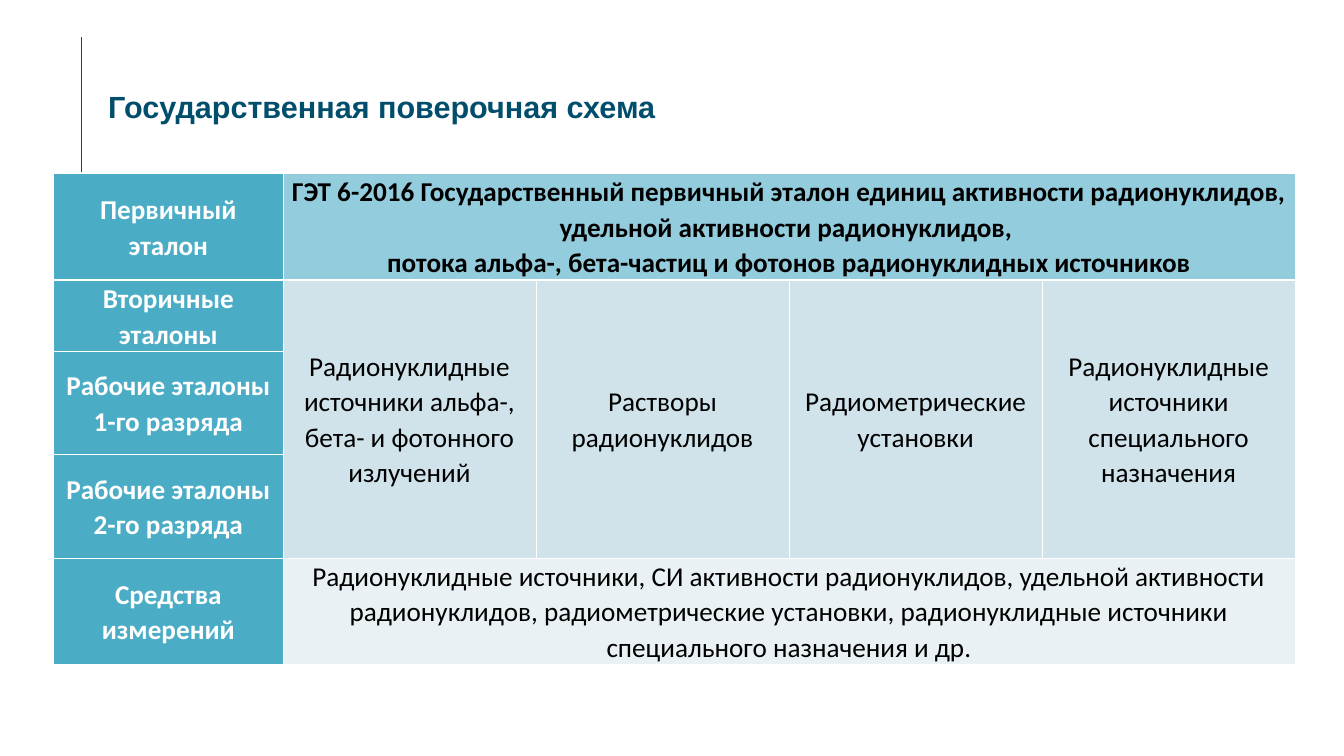
from lxml import etree
from pptx import Presentation
from pptx import util as u
from pptx.dml.color import RGBColor
from pptx.enum import shapes, text
from pptx.oxml import ns

TITLE = "Государственная поверочная схема"
LEVELS = [
    "Первичный эталон",
    "Вторичные эталоны",
    "Рабочие эталоны 1-го разряда",
    "Рабочие эталоны 2-го разряда",
    "Средства измерений",
]
PRIMARY_STANDARD = (
    "ГЭТ 6-2016 Государственный первичный эталон единиц активности радионуклидов, "
    "удельной активности радионуклидов, \n"
    "потока альфа-, бета-частиц и фотонов радионуклидных источников"
)
STANDARD_KINDS = [
    "Радионуклидные источники альфа-, бета- и фотонного излучений",
    "Растворы радионуклидов",
    "Радиометрические установки",
    "Радионуклидные источники специального назначения",
]
INSTRUMENTS = (
    "Радионуклидные источники, СИ активности радионуклидов, удельной активности "
    "радионуклидов, радиометрические установки, радионуклидные источники "
    "специального назначения и др."
)

SLIDE_POINTS = (1583, 890)
TITLE_BOX = (1.77, 1.41, 18.44, 0.66)
RULE = (1.33, 2.82, 1.33, 0.6)
TABLE_BOX = (0.88, 2.84, 20.31, 7.87)
COLUMN_WIDTHS = [3.75] + [4.14] * len(STANDARD_KINDS)
ROW_HEIGHTS = [1.69, 1.11, 1.69, 1.69, 1.69]
CELL_MARGIN = 0.1


class Theme:
    title_font, table_font = "Arial", "Calibri"
    title_size, table_size = 36, 32
    rule_width, border_width, header_border_width = 1.65, 1, 3
    navy, white, black = "004E6B", "FFFFFF", "000000"
    level, primary, kind, instruments = "4BACC6", "93CDDD", "D0E3EA", "E9F1F5"


def inches(values):
    return [u.Inches(value) for value in values]


def write(frame, content, *, font, size, color, bold=False, align=None,
          spacing=None):
    """Fill the first paragraph, with pair kerning off."""
    paragraph = frame.paragraphs[0]
    paragraph.text = content
    paragraph.alignment = align
    paragraph.line_spacing = spacing
    for run in paragraph.runs:
        run.font.name = font
        run.font.size = u.Pt(size)
        run.font.bold = bold
        run.font.color.rgb = RGBColor.from_string(color)
        run._r.get_or_add_rPr().set("kern", "0")


def set_borders(cell, widths):
    """Draw white borders; widths are points for left, right, top, bottom."""
    properties = cell._tc.get_or_add_tcPr()
    for index, (side, width) in enumerate(zip("LRTB", widths)):
        line = etree.Element(ns.qn(f"a:ln{side}"), w=str(int(u.Pt(width))))
        fill = etree.SubElement(line, ns.qn("a:solidFill"))
        etree.SubElement(fill, ns.qn("a:srgbClr"), val=Theme.white)
        properties.insert(index, line)


def fill_cell(cell, content, fill, *, color=Theme.black, bold=False,
              anchor=text.MSO_ANCHOR.MIDDLE):
    cell.fill.solid()
    cell.fill.fore_color.rgb = RGBColor.from_string(fill)
    cell.vertical_anchor = anchor
    cell.margin_left = cell.margin_right = u.Inches(CELL_MARGIN)
    cell.margin_top = cell.margin_bottom = 0
    write(cell.text_frame, content, font=Theme.table_font, size=Theme.table_size,
          color=color, bold=bold, align=text.PP_ALIGN.CENTER, spacing=1.07)


def add_rule(slide):
    rule = slide.shapes.add_connector(shapes.MSO_CONNECTOR.STRAIGHT, *inches(RULE))
    rule.line.color.rgb = RGBColor.from_string(Theme.navy)
    rule.line.width = u.Pt(Theme.rule_width)
    etree.SubElement(rule._element.spPr, ns.qn("a:effectLst"))


def add_title(slide):
    title = slide.shapes.title
    title.left, title.top, title.width, title.height = inches(TITLE_BOX)
    frame = title.text_frame
    frame.margin_left = frame.margin_right = frame.margin_top = frame.margin_bottom = 0
    frame.vertical_anchor = text.MSO_ANCHOR.MIDDLE
    frame.auto_size = text.MSO_AUTO_SIZE.NONE
    frame.word_wrap = True
    write(frame, TITLE, font=Theme.title_font, size=Theme.title_size,
          color=Theme.navy, bold=True, align=text.PP_ALIGN.LEFT)


def add_scheme(slide):
    table = slide.shapes.add_table(
        len(LEVELS), len(COLUMN_WIDTHS), *inches(TABLE_BOX)).table
    table.first_row = table.horz_banding = False
    for column, width in zip(table.columns, inches(COLUMN_WIDTHS)):
        column.width = width
    for row, height in zip(table.rows, inches(ROW_HEIGHTS)):
        row.height = height

    last_row, last_column = len(LEVELS) - 1, len(STANDARD_KINDS)
    for row, level in enumerate(LEVELS):
        fill_cell(table.cell(row, 0), level, Theme.level,
                  color=Theme.white, bold=True)
    for row, content, fill, bold in [
        (0, PRIMARY_STANDARD, Theme.primary, True),
        (last_row, INSTRUMENTS, Theme.instruments, False),
    ]:
        table.cell(row, 1).merge(table.cell(row, last_column))
        fill_cell(table.cell(row, 1), content, fill, bold=bold,
                  anchor=text.MSO_ANCHOR.TOP)
    for column, kind in enumerate(STANDARD_KINDS, start=1):
        table.cell(1, column).merge(table.cell(last_row - 1, column))
        fill_cell(table.cell(1, column), kind, Theme.kind)

    thin = Theme.border_width
    for row in range(len(LEVELS)):
        bottom = Theme.header_border_width if row == 0 else thin
        for column in range(len(COLUMN_WIDTHS)):
            set_borders(table.cell(row, column), (thin, thin, thin, bottom))


def main():
    presentation = Presentation()
    presentation.slide_width, presentation.slide_height = map(u.Pt, SLIDE_POINTS)
    slide = presentation.slides.add_slide(presentation.slide_layouts[5])
    add_rule(slide)
    add_title(slide)
    add_scheme(slide)
    presentation.save("out.pptx")


if __name__ == "__main__":
    main()
